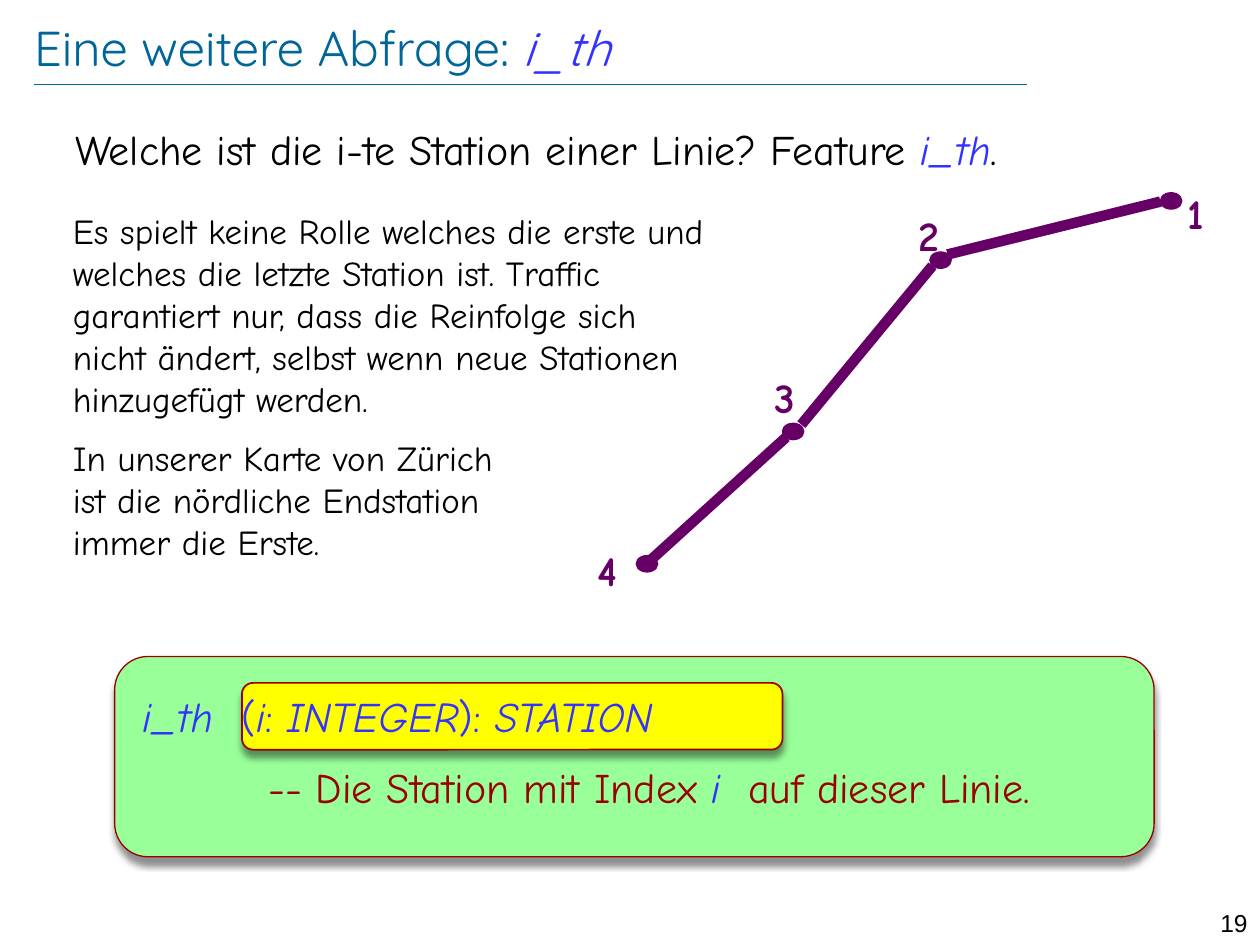
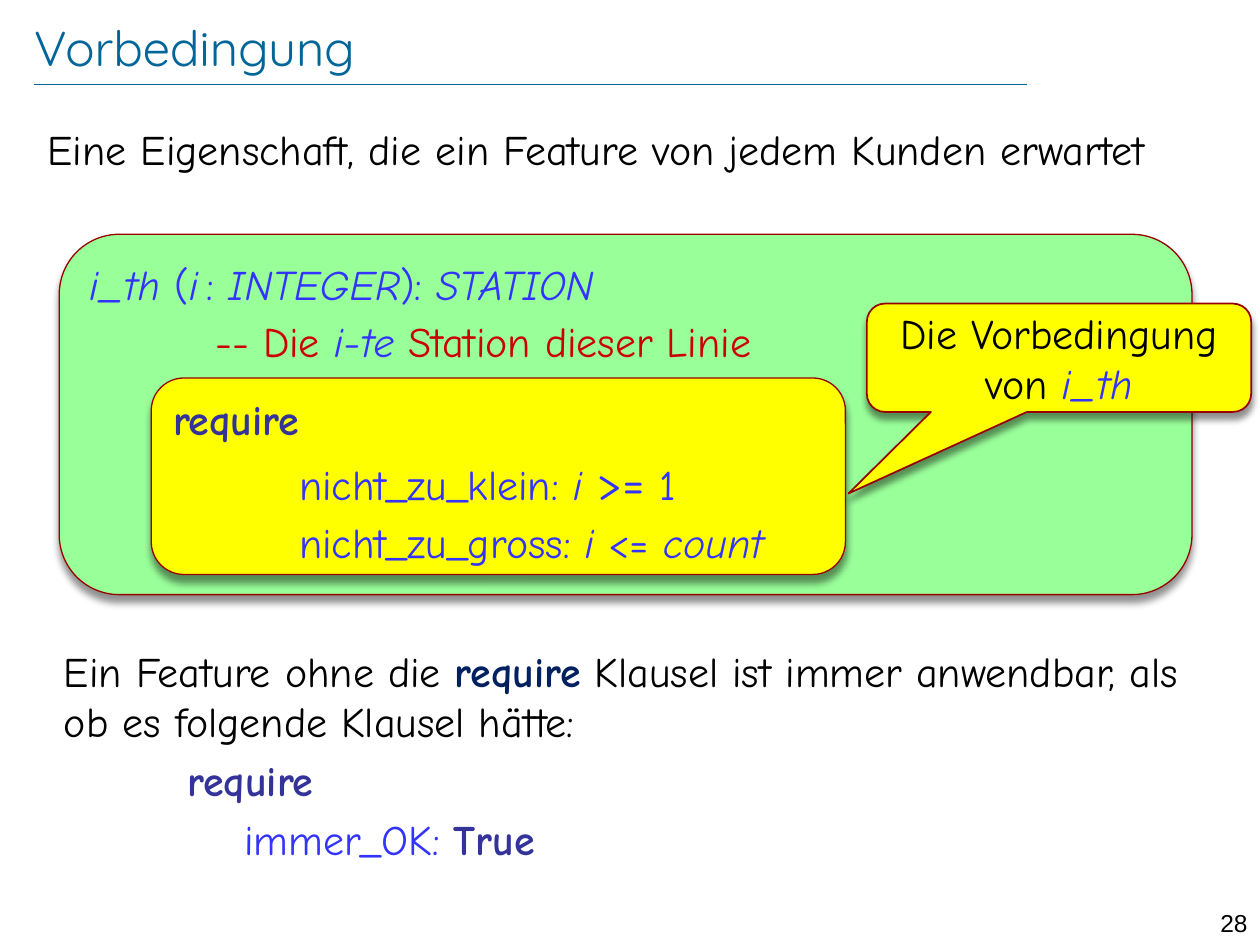
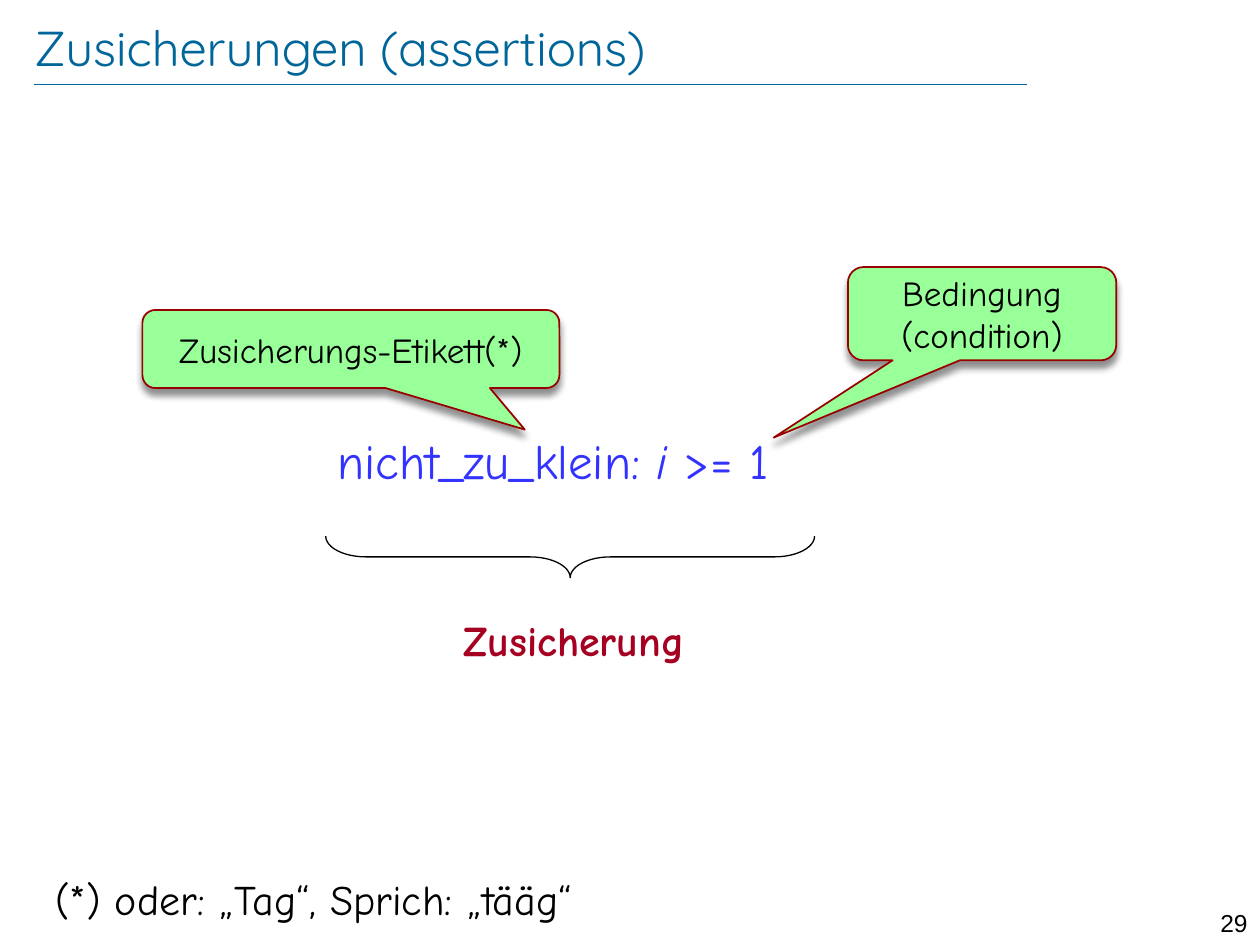
from lxml import etree
from pptx import Presentation
from pptx.dml.color import RGBColor
from pptx.enum.shapes import MSO_CONNECTOR, MSO_SHAPE
from pptx.enum.text import MSO_ANCHOR, PP_ALIGN
from pptx.oxml.ns import qn
from pptx.util import Inches, Pt

ROUND = MSO_SHAPE.ROUNDED_RECTANGLE
CALL = MSO_SHAPE.ROUNDED_RECTANGULAR_CALLOUT
OVAL = MSO_SHAPE.OVAL
BRACE = MSO_SHAPE.RIGHT_BRACE
LINE = MSO_CONNECTOR.STRAIGHT
LEFT, MID, RIGHT = PP_ALIGN.LEFT, PP_ALIGN.CENTER, PP_ALIGN.RIGHT
TOP, CENTER = MSO_ANCHOR.TOP, MSO_ANCHOR.MIDDLE

BLACK, TEAL, BLUE, NAVY = "000000", "006699", "3333FF", "333399"
GREEN, YELLOW, RED, PLUM = "99FF99", "FFFF00", "990000", "660066"
BODY, HEAD, FOOT = "Comic Neue", "Quicksand", "Arial"
COLS, ROWS = 100, 75
INSET = (1, 0.5, 1, 0.5)
FLAT = (0, 0, 0, 0)
TIGHT = (0, 0.5, 0, 0.5)


def tint(code):
    return RGBColor.from_string(code)


class Deck:
    def __init__(self):
        self.show = Presentation()
        self.show.slide_width = Inches(10)
        self.show.slide_height = Inches(7.5)
        self.col = self.show.slide_width / COLS
        self.row = self.show.slide_height / ROWS
        self.slide = None

    def place(self, box):
        x, y, w, h = box
        return (round(x * self.col), round(y * self.row),
                round(w * self.col), round(h * self.row))

    def page(self, num, *runs):
        self.slide = self.show.slides.add_slide(self.show.slide_layouts[6])
        self.line((2.7, 6.7), (81.5, 6.7), TEAL, 0.25)
        self.text((94.5, 71.6, 5.5, 2.4), [[(num, BLACK)]], 14, FOOT, align=RIGHT)
        self.text((2.7, 1.3, 86.9, 4.8), [runs], 28, HEAD, anchor=CENTER, inset=FLAT)

    def effect(self, item, shade=False):
        tag = etree.SubElement(item._element.spPr, qn("a:effectLst"))
        if shade:
            drop = etree.SubElement(tag, qn("a:outerShdw"), blurRad=str(Pt(4)),
                                    dist=str(Pt(4)), dir="5400000", rotWithShape="0")
            hue = etree.SubElement(drop, qn("a:srgbClr"), val=BLACK)
            etree.SubElement(hue, qn("a:alpha"), val="43000")

    def line(self, start, end, color, width):
        x1, y1, x2, y2 = self.place((*start, *end))
        link = self.slide.shapes.add_connector(LINE, x1, y1, x2, y2)
        link.line.color.rgb = tint(color)
        link.line.width = Pt(width)
        self.effect(link)

    def shape(self, kind, box, fill, edge, width=0.75, shade=False, adj=(), turn=0):
        item = self.slide.shapes.add_shape(kind, *self.place(box))
        if fill:
            item.fill.solid()
            item.fill.fore_color.rgb = tint(fill)
        else:
            item.fill.background()
        item.line.color.rgb = tint(edge)
        item.line.width = Pt(width)
        item.rotation = turn
        for i, val in enumerate(adj):
            item.adjustments[i] = val
        self.effect(item, shade)
        return item

    def panel(self, box, fill, paras=(), width=0.75, ind=()):
        item = self.shape(ROUND, box, fill, RED, width, True)
        self.put(item.text_frame, paras, 24, ind=ind, gap=4)

    def call(self, box, fill, adj, paras, size):
        item = self.shape(CALL, box, fill, RED, 1, True, (*adj, 0.167))
        self.put(item.text_frame, paras, size, align=MID, anchor=CENTER, inset=TIGHT)

    def text(self, box, paras, size=24, font=BODY, **opts):
        item = self.slide.shapes.add_textbox(*self.place(box))
        self.put(item.text_frame, paras, size, font, **opts)

    def put(self, frame, paras, size, font=BODY, align=LEFT, anchor=TOP,
            inset=INSET, ind=(), gap=0, wrap=True):
        frame.word_wrap = wrap
        frame.vertical_anchor = anchor
        left, top, right, low = inset
        frame.margin_left, frame.margin_right = round(left * self.col), round(right * self.col)
        frame.margin_top, frame.margin_bottom = round(top * self.row), round(low * self.row)
        for i, runs in enumerate(paras):
            para = frame.add_paragraph() if i else frame.paragraphs[0]
            para.alignment = align
            if i:
                para.space_before = Pt(gap)
            if i < len(ind) and ind[i]:
                para._p.get_or_add_pPr().set("marL", str(round(ind[i] * self.col)))
            for item in runs:
                self.span(para, size, font, *item)

    def span(self, para, size, font, words, color, mark="", big=None):
        for i, part in enumerate(words.split("\n")):
            if i:
                para.add_line_break()
            run = para.add_run()
            run.text = part
            run.font.name = font
            run.font.size = Pt(big or size)
            run.font.color.rgb = tint(color)
            run.font.bold = mark == "b"
            run.font.italic = mark == "i"


def query(deck):
    deck.page("19", ("Eine weitere Abfrage: ", TEAL), ("i_th", BLUE, "i"))
    deck.panel((9.1, 52.1, 82.5, 15.9), GREEN)
    deck.text((5, 9.3, 92.1, 5.2), [[
        ("Welche ist die i-te Station einer Linie? Feature ", BLACK),
        ("i_th", BLUE, "i"), (".", BLACK)]])
    stops = [("1", 92.1, 15.3, 93.3, 14.4), ("2", 73.8, 20, 71.9, 16.1),
             ("3", 62.1, 33.6, 60.5, 29), ("4", 50.5, 44.1, 46.4, 42.7)]
    for name, x, y, left, top in stops:
        deck.shape(OVAL, (x, y, 1.7, 1.3), PLUM, PLUM)
        deck.text((left, top, 4.1, 5.1), [[(name, PLUM, "b")]], wrap=False)
    links = [((51.7, 44.4), (62.4, 34.7)), ((63.6, 33.7), (74, 21.1)),
             ((75.2, 20.2), (92.1, 16))]
    for start, end in links:
        deck.line(start, end, PLUM, 6)
    deck.panel((19.2, 54.2, 42.9, 5.3), YELLOW, width=1)
    deck.text((10.3, 54.3, 79.4, 11.1), [
        [("i_th", BLUE, "i"), ("  (", BLUE), ("i", BLUE, "i"), (": ", BLUE),
         ("INTEGER", BLUE, "i"), ("): ", BLUE), ("STATION", BLUE, "i")],
        [("-- Die Station mit Index ", RED), ("i ", BLUE, "i"),
         (" auf dieser Linie.", RED)]], ind=(0, 10), gap=12)
    deck.text((4.8, 16.1, 52.4, 33), [
        [("Es spielt keine Rolle welches die erste und welches die letzte Station ist. "
          "Traffic garantiert nur, dass die Reinfolge sich nicht ändert, selbst wenn "
          "neue Stationen hinzugefügt werden.", BLACK)],
        [("In unserer Karte von Zürich\nist die nördliche Endstation\n"
          "immer die Erste.", BLACK)]], 20, gap=10)


def demand(deck):
    deck.page("28", ("Vorbedingung", TEAL))
    deck.text((2.8, 9.3, 94, 5.2), [[
        ("Eine Eigenschaft, die ein Feature von jedem Kunden erwartet", BLACK)]])
    deck.panel((4.7, 18.6, 89.9, 28.6), GREEN, [
        [("i_th", BLUE, "i"), (" (", BLUE), ("i", BLUE, "i"), (" ", BLUE, "i", 14),
         (": ", BLUE), ("INTEGER", BLUE, "i"), ("): ", BLUE), ("STATION", BLUE, "i")],
        [("-- Die ", "CC0000"), ("i-te ", BLUE, "i"),
         ("Station dieser Linie", "CC0000")]], ind=(0, 10))
    deck.panel((12, 30, 55.1, 15.6), YELLOW, [
        [("require", NAVY, "b")],
        [("nicht_zu_klein:", BLUE), (" i ", BLUE, "i"), (">=", BLUE, "", 28), (" 1", BLUE)],
        [("nicht_zu_gross:", BLUE), (" i ", BLUE, "i"), ("<= ", BLUE),
         ("count", BLUE, "i")]], ind=(0, 10, 10))
    deck.call((68.8, 24.1, 30.5, 8.6), YELLOW, (-0.548, 1.253), [
        [("Die Vorbedingung von ", BLACK), ("i_th", BLUE, "i")]], 24)
    deck.text((4.1, 50.7, 91, 18.8), [
        [("Ein Feature ohne die ", BLACK), ("require", "002060", "b"),
         (" Klausel ist immer anwendbar, als ob es folgende Klausel hätte:", BLACK)],
        [("require", NAVY, "b")],
        [("immer_OK: ", BLUE), ("True", NAVY, "b")]], ind=(0, 9.8, 14.3), gap=4.8)


def claim(deck):
    deck.page("29", ("Zusicherungen (assertions)", TEAL))
    deck.shape(BRACE, (43.6, 24.8, 3.3, 38.8), None, BLACK, adj=(0.97, 0.5), turn=90)
    deck.text((25.8, 33.7, 40, 5.7), [[
        ("nicht_zu_klein: ", BLUE), ("i", BLUE, "i"), (" >= 1", BLUE)]], 28, wrap=False)
    deck.text((35.8, 48.3, 21.2, 5), [[("Zusicherung", "A50021", "b")]], wrap=False)
    deck.call((67.3, 21.2, 21.3, 7.4), GREEN, (-0.777, 1.329),
              [[("Bedingung (condition)", BLACK)]], 20)
    deck.call((11.3, 24.6, 33.1, 6.2), GREEN, (0.417, 1.032),
              [[("Zusicherungs-Etikett(*)", BLACK)]], 20)
    deck.text((3.4, 68.8, 56.5, 5), [[("(*) oder: „Tag“, Sprich: „tääg“", BLACK)]])


def main():
    deck = Deck()
    for build in (query, demand, claim):
        build(deck)
    deck.show.save("out.pptx")


if __name__ == "__main__":
    main()
